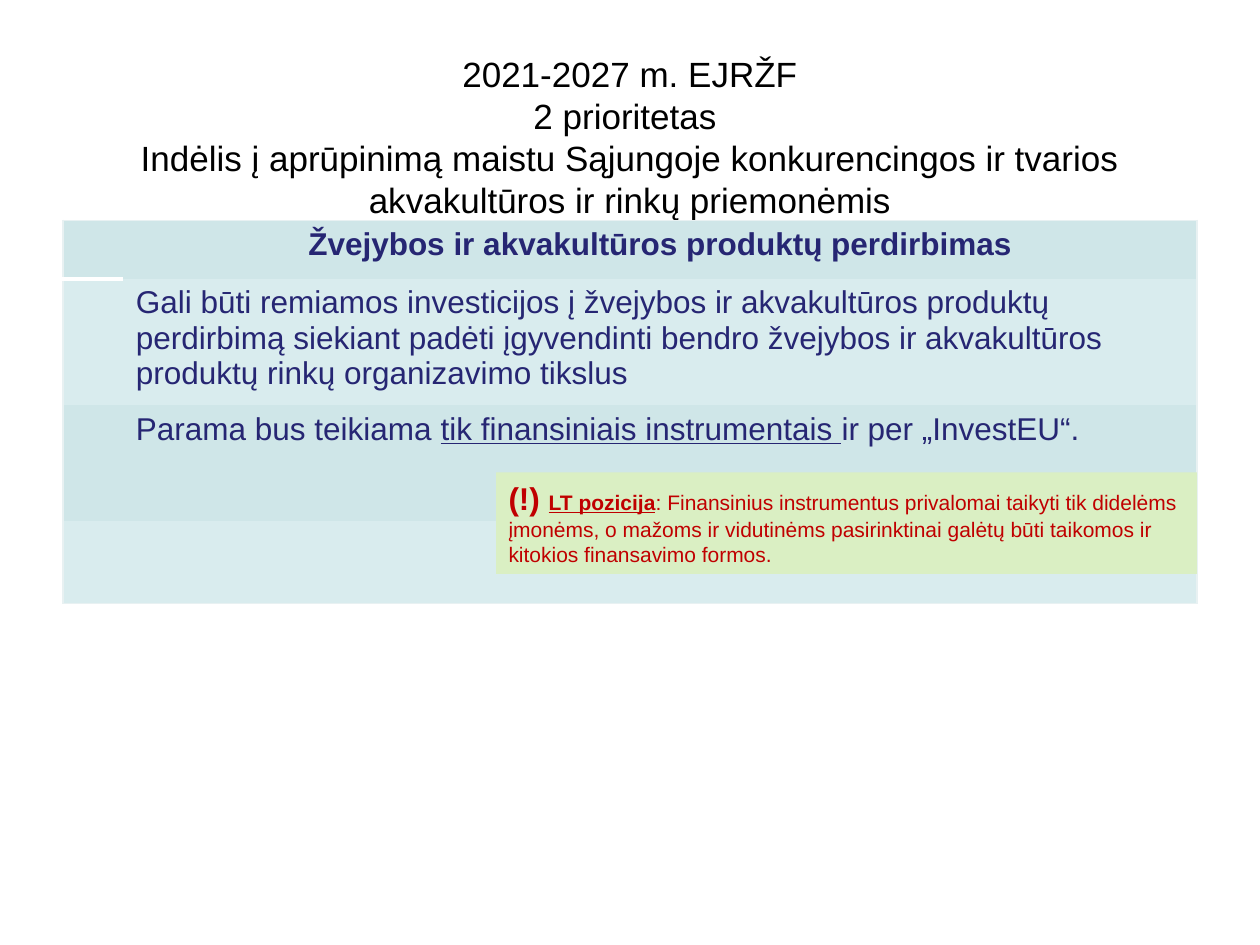
from lxml import etree
from pptx import Presentation
from pptx.dml.color import RGBColor
from pptx.enum.shapes import MSO_SHAPE
from pptx.enum.text import MSO_ANCHOR, PP_ALIGN
from pptx.oxml.ns import qn
from pptx.util import Pt

CENTER = PP_ALIGN.CENTER
LEFT = PP_ALIGN.LEFT
MIDDLE = MSO_ANCHOR.MIDDLE
TOP = MSO_ANCHOR.TOP
RECTANGLE = MSO_SHAPE.RECTANGLE

COLORS = {
    "title": "000000",
    "text": "262673",
    "alert": "C00000",
    "note": "DAEFC3",
    "band_dark": "CFE6E8",
    "band_light": "D9ECEE",
    "edge": "E8F1F2",
    "rule": "FFFFFF",
}


def color(name):
    return RGBColor.from_string(COLORS[name])


def add_text(para, text, size=18, ink="text", bold=False, underline=False):
    for index, line in enumerate(text.split("\n")):
        if index:
            para.add_line_break()
        span = para.add_run()
        span.text = line
        span.font.name = "Arial"
        span.font.size = Pt(size)
        span.font.bold = bold
        span.font.underline = underline
        span.font.color.rgb = color(ink)


class SlideBuilder:
    def __init__(self, deck):
        self.slide = deck.slides.add_slide(deck.slide_layouts[6])

    def fill_frame(self, frame, spans, align=LEFT, anchor=TOP):
        frame.word_wrap = True
        frame.vertical_anchor = anchor
        para = frame.paragraphs[0]
        para.alignment = align
        for text, style in spans:
            add_text(para, text, **style)

    def title(self, area, text):
        box = self.slide.shapes.add_textbox(*map(Pt, area))
        spans = [(text, {"size": 20, "ink": "title"})]
        self.fill_frame(box.text_frame, spans, CENTER, MIDDLE)

    def note(self, area, spans):
        box = self.slide.shapes.add_shape(RECTANGLE, *map(Pt, area))
        box.shadow.inherit = False
        box.fill.solid()
        box.fill.fore_color.rgb = color("note")
        box.line.fill.background()
        self.fill_frame(box.text_frame, spans)

    def borders(self, cell, lines):
        properties = cell._tc.get_or_add_tcPr()
        for index, side in enumerate("LRTB"):
            border = etree.Element(qn(f"a:ln{side}"))
            if side in lines:
                name, width = lines[side]
                border.set("w", str(Pt(width)))
                fill = etree.SubElement(border, qn("a:solidFill"))
                etree.SubElement(fill, qn("a:srgbClr"), val=COLORS[name])
            else:
                border.set("w", "0")
                etree.SubElement(border, qn("a:noFill"))
            properties.insert(index, border)

    def table(self, area, widths, heights, rows):
        frame = self.slide.shapes.add_table(len(rows), len(widths), *map(Pt, area))
        table = frame.table
        table.first_row = False
        table.horz_banding = False
        for column, width in zip(table.columns, widths):
            column.width = Pt(width)
        for row, height in zip(table.rows, heights):
            row.height = Pt(height)
        edge, rule = ("edge", 0.75), ("rule", 3)
        last = len(rows) - 1
        for index, (align, spans) in enumerate(rows):
            for side, cell in zip("LR", table.rows[index].cells):
                lines = {side: edge}
                if index == 0:
                    lines["T"] = edge
                if index == last:
                    lines["B"] = edge
                if side == "L" and index < 2:
                    lines["T" if index else "B"] = rule
                self.borders(cell, lines)
                cell.fill.solid()
                band = "band_light" if index % 2 else "band_dark"
                cell.fill.fore_color.rgb = color(band)
            self.fill_frame(table.cell(index, 1).text_frame, spans, align)


def main():
    deck = Presentation()
    deck.slide_width, deck.slide_height = Pt(720), Pt(540)
    builder = SlideBuilder(deck)
    builder.title(
        (36, 21.6, 648, 112.3),
        "2021-2027 m. EJRŽF\n2 prioritetas \nIndėlis į aprūpinimą maistu Sąjungoje "
        "konkurencingos ir tvarios akvakultūros ir rinkų priemonėmis",
    )
    builder.table(
        (36, 126, 648, 217.5),
        (34.5, 613.5),
        (33.5, 70.5, 66.5, 47),
        [
            (CENTER, [("Žvejybos ir akvakultūros produktų perdirbimas", {"bold": True})]),
            (LEFT, [(
                "Gali būti remiamos investicijos į žvejybos ir akvakultūros produktų "
                "perdirbimą siekiant padėti įgyvendinti bendro žvejybos ir akvakultūros "
                "produktų rinkų organizavimo tikslus", {},
            )]),
            (LEFT, [
                ("Parama bus teikiama ", {}),
                ("tik finansiniais instrumentais ", {"underline": True}),
                ("ir per „InvestEU“.", {}),
            ]),
            (LEFT, []),
        ],
    )
    alert = {"size": 12, "ink": "alert"}
    builder.note(
        (283.5, 270, 400.5, 58),
        [
            ("(!) ", {"ink": "alert", "bold": True}),
            ("LT pozicija", {**alert, "bold": True, "underline": True}),
            (
                ": Finansinius instrumentus privalomai taikyti tik didelėms įmonėms, "
                "o mažoms ir vidutinėms pasirinktinai galėtų būti taikomos ir kitokios "
                "finansavimo formos.", alert,
            ),
        ],
    )
    deck.save("out.pptx")


if __name__ == "__main__":
    main()
